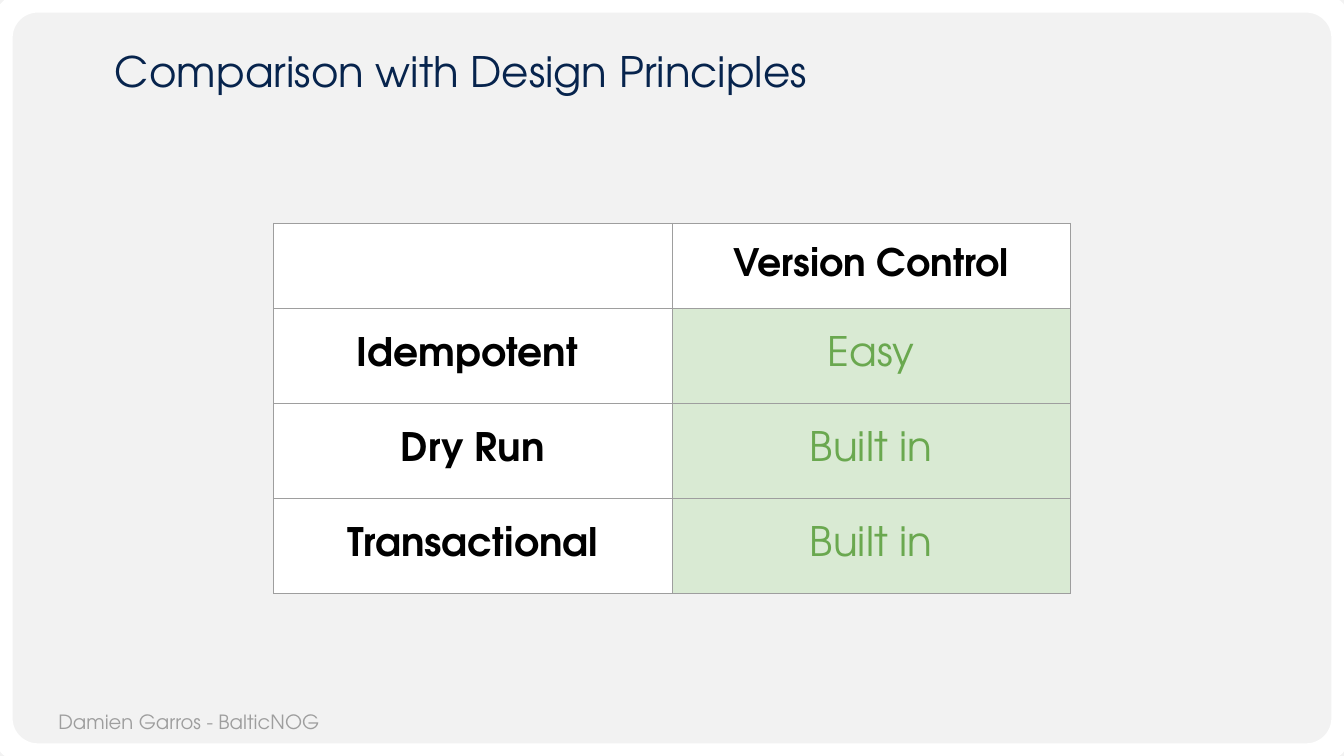
from dataclasses import dataclass

from lxml.etree import SubElement
from pptx import Presentation
from pptx.dml.color import RGBColor
from pptx.enum.shapes import MSO_SHAPE
from pptx.enum.text import MSO_ANCHOR, PP_ALIGN
from pptx.oxml.ns import qn
from pptx.slide import Slide
from pptx.table import _Cell
from pptx.text.text import TextFrame
from pptx.util import Pt


@dataclass(frozen=True)
class Theme:
    font: str = "TeX Gyre Adventor"
    backdrop: str = "F2F2F2"
    white: str = "FFFFFF"
    black: str = "000000"
    navy: str = "07244D"
    grey: str = "9E9E9E"
    green: str = "6AA84F"
    pale_green: str = "D9EAD3"
    title_size: float = 30
    footer_size: float = 14
    header_size: float = 27
    principle_size: float = 28
    rating_size: float = 29
    inset: float = 7.2
    frame_width: float = 18
    border_width: float = 0.75


THEME = Theme()


@dataclass(frozen=True)
class TextStyle:
    size: float
    color: str
    bold: bool = False


@dataclass(frozen=True)
class CellContent:
    text: str
    style: TextStyle
    fill: str = THEME.white


TITLE = TextStyle(THEME.title_size, THEME.navy)
FOOTER = TextStyle(THEME.footer_size, THEME.grey)
HEADER = TextStyle(THEME.header_size, THEME.black, True)
PRINCIPLE = TextStyle(THEME.principle_size, THEME.black, True)
RATING = TextStyle(THEME.rating_size, THEME.green)

RATINGS = [("Idempotent ", "Easy"), ("Dry Run", "Built in"), ("Transactional", "Built in")]
ROWS = [[CellContent("", HEADER), CellContent("Version Control", HEADER)]] + [
    [CellContent(principle, PRINCIPLE), CellContent(rating, RATING, THEME.pale_green)]
    for principle, rating in RATINGS
]
COLUMN_WIDTH = 284.5
HEADER_HEIGHT = 60.5
ROW_HEIGHT = 67.9


def write_text(frame: TextFrame, text: str, style: TextStyle,
               align: PP_ALIGN = PP_ALIGN.LEFT) -> None:
    para = frame.paragraphs[0]
    para.alignment = align
    span = para.add_run()
    span.text = text
    span.font.name = THEME.font
    span.font.size = Pt(style.size)
    span.font.bold = style.bold
    span.font.color.rgb = RGBColor.from_string(style.color)


def set_insets(target: TextFrame | _Cell) -> None:
    target.margin_left = target.margin_right = Pt(THEME.inset)
    target.margin_top = target.margin_bottom = Pt(THEME.inset)


def add_frame(page: Slide, width: int, height: int) -> None:
    """Draw the rounded white frame around the page."""
    frame = page.shapes.add_shape(MSO_SHAPE.ROUNDED_RECTANGLE, 0, 0, width, height)
    frame.adjustments[0] = 0.05
    frame.shadow.inherit = False
    frame.fill.background()
    frame.line.color.rgb = RGBColor.from_string(THEME.white)
    frame.line.width = Pt(THEME.frame_width)


def add_footer(page: Slide) -> None:
    box = page.shapes.add_textbox(Pt(34.6), Pt(499.7), Pt(465.8), Pt(31.7))
    box.text_frame.word_wrap = True
    set_insets(box.text_frame)
    write_text(box.text_frame, "Damien Garros - BalticNOG", FOOTER)


def fill_title(page: Slide) -> None:
    title = page.shapes.title
    title.left, title.top, title.width, title.height = Pt(74.9), Pt(32.4), Pt(847.4), Pt(46.8)
    frame = title.text_frame
    frame.word_wrap = True
    frame.vertical_anchor = MSO_ANCHOR.TOP
    set_insets(frame)
    write_text(frame, "Comparison with Design Principles", TITLE)
    frame.paragraphs[0].line_spacing = 0.8


def add_borders(cell: _Cell) -> None:
    properties = cell._tc.get_or_add_tcPr()
    for side in ("a:lnL", "a:lnR", "a:lnT", "a:lnB"):
        line = SubElement(properties, qn(side), w=str(int(Pt(THEME.border_width))))
        SubElement(SubElement(line, qn("a:solidFill")), qn("a:srgbClr"), val=THEME.grey)


def fill_cell(cell: _Cell, content: CellContent) -> None:
    add_borders(cell)
    cell.fill.solid()
    cell.fill.fore_color.rgb = RGBColor.from_string(content.fill)
    cell.vertical_anchor = MSO_ANCHOR.MIDDLE
    set_insets(cell)
    if content.text:
        write_text(cell.text_frame, content.text, content.style, PP_ALIGN.CENTER)


def add_comparison_table(page: Slide) -> None:
    heights = [HEADER_HEIGHT] + [ROW_HEIGHT] * len(RATINGS)
    table = page.shapes.add_table(len(ROWS), 2, Pt(195.5), Pt(159.6),
                                  Pt(2 * COLUMN_WIDTH), Pt(sum(heights))).table
    table.first_row = table.horz_banding = False
    for column in table.columns:
        column.width = Pt(COLUMN_WIDTH)
    for row, height, contents in zip(table.rows, heights, ROWS):
        row.height = Pt(height)
        for cell, content in zip(row.cells, contents):
            fill_cell(cell, content)


def main() -> None:
    deck = Presentation()
    deck.slide_width, deck.slide_height = Pt(960), Pt(540)
    page = deck.slides.add_slide(deck.slide_layouts.get_by_name("Title Only"))
    page.background.fill.solid()
    page.background.fill.fore_color.rgb = RGBColor.from_string(THEME.backdrop)
    add_frame(page, deck.slide_width, deck.slide_height)
    add_footer(page)
    fill_title(page)
    add_comparison_table(page)
    deck.save("out.pptx")


if __name__ == "__main__":
    main()
